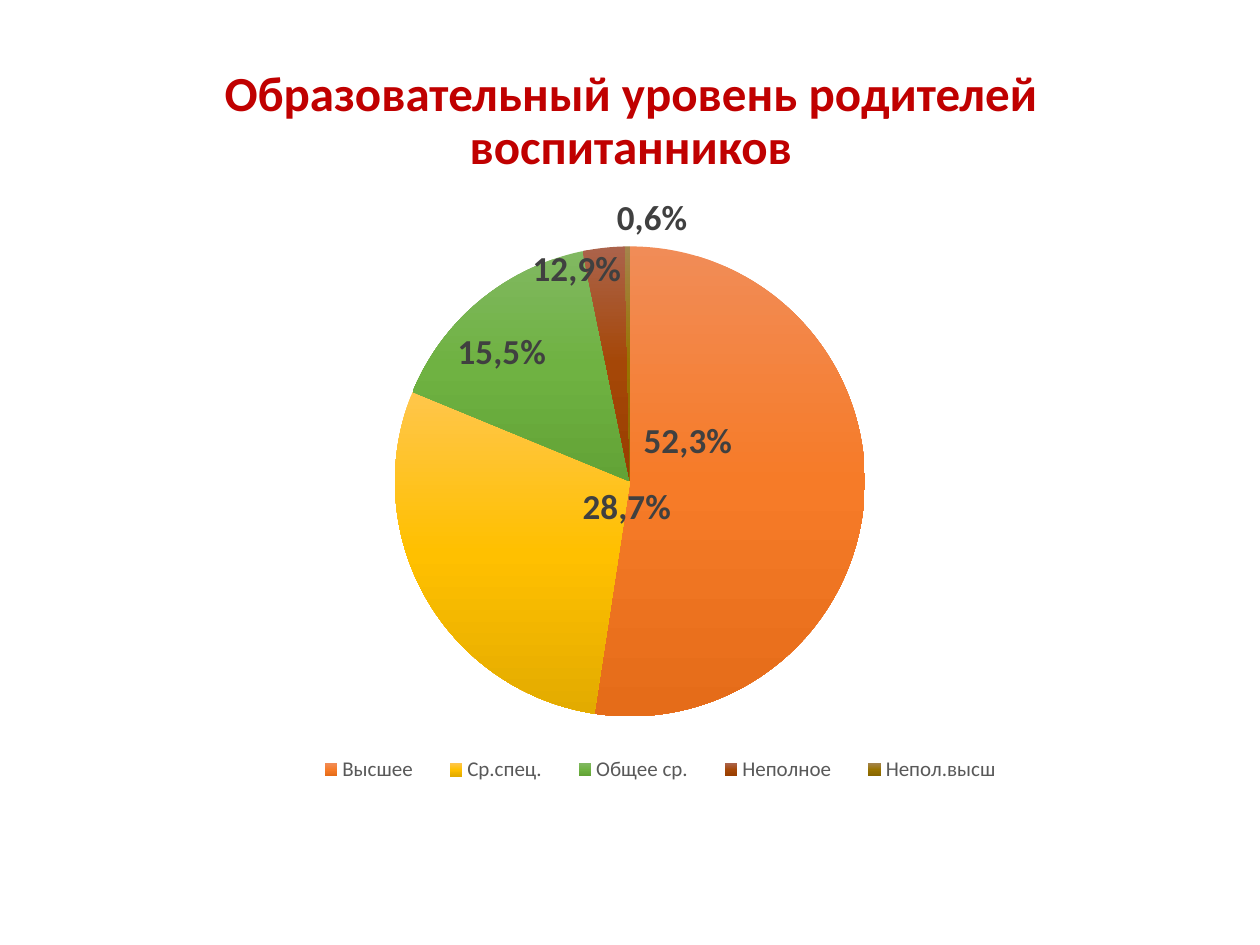
from math import cos, pi, sin

from pptx import Presentation
from pptx.chart.data import CategoryChartData
from pptx.dml.color import RGBColor
from pptx.enum.chart import XL_CHART_TYPE, XL_LABEL_POSITION, XL_LEGEND_POSITION
from pptx.enum.text import MSO_ANCHOR, PP_ALIGN
from pptx.oxml import parse_xml
from pptx.oxml.ns import nsdecls
from pptx.util import Cm, Pt

TITLE = "Образовательный уровень родителей воспитанников"
FONT = "Calibri"
COLORS = {"title": "C00000", "label": "404040", "legend": "595959"}

# category, value, label, label centre on the slide in cm, gradient from top to bottom
LEVELS = [
    ("Высшее", 91, "52,3%", (13.87, 8.89), ("F18C57", "F67B28", "E56C19")),
    ("Ср.спец.", 50, "28,7%", (12.64, 10.22), ("FFC64B", "FFC000", "E3AB00")),
    ("Общее ср.", 27, "15,5%", (10.12, 7.1), ("81B861", "6FB242", "62A336")),
    ("Неполное", 5, "12,9%", (11.63, 5.42), ("AB634B", "A54707", "983E00")),
    ("Непол.высш", 0.6, "0,6%", (13.15, 4.4), ("A4844B", "997300", "886600")),
]

CHART = (1.8, 3.88, 21.82, 12.65)  # left, top, width, height in cm
PLOT = (0.08, 0.086, 0.839, 0.749)  # the same as shares of the chart
LEGEND = (0.19, 0.885, 0.675, 0.07)


def style(font, size, color, bold=False):
    font.name, font.size, font.bold = FONT, Pt(size), bold
    font.color.rgb = RGBColor.from_string(COLORS[color])


def layout(**values):
    items = "".join(f'<c:{tag} val="{value}"/>' for tag, value in values.items())
    return parse_xml(f'<c:layout {nsdecls("c")}><c:manualLayout>{items}'
                     '</c:manualLayout></c:layout>')


def box_layout(box, **target):
    """Layout with a fixed place and size inside the chart."""
    x, y, w, h = box
    return layout(**target, xMode="edge", yMode="edge", x=x, y=y, w=w, h=h)


def gradient(colors):
    stops = "".join(f'<a:gs pos="{i * 50000}"><a:srgbClr val="{c}"/></a:gs>'
                    for i, c in enumerate(colors))
    return parse_xml(f'<a:gradFill {nsdecls("a")} rotWithShape="1"><a:gsLst>{stops}</a:gsLst>'
                     '<a:lin ang="5400000" scaled="0"/></a:gradFill>')


prs = Presentation()
prs.slide_width, prs.slide_height = Cm(25.4), Cm(19.05)
s = prs.slides.add_slide(prs.slide_layouts[6])

tf = s.shapes.add_textbox(Cm(1.83), Cm(0), Cm(21.77), Cm(4.93)).text_frame
tf.word_wrap, tf.vertical_anchor = True, MSO_ANCHOR.MIDDLE
p = tf.paragraphs[0]
p.text, p.alignment, p.line_spacing = TITLE, PP_ALIGN.CENTER, 0.9
style(p.font, 28, "title", True)

data = CategoryChartData()
data.categories = [level[0] for level in LEVELS]
data.add_series("Series 1", [level[1] for level in LEVELS])
chart = s.shapes.add_chart(XL_CHART_TYPE.PIE, *map(Cm, CHART), data).chart
chart.has_title = False
chart.font.name, chart.font.size = FONT, Pt(10)
chart.has_legend = True
legend = chart.legend
legend.position = XL_LEGEND_POSITION.BOTTOM
legend.include_in_layout = False
style(legend.font, 12, "legend")

plot = chart.plots[0]
area = plot._element.getparent()
for old in area.xpath("c:layout") + legend._element.xpath("c:layout"):
    old.getparent().remove(old)
area.insert(0, box_layout(PLOT, layoutTarget="inner"))
legend._element.xpath("c:legendPos")[0].addnext(box_layout(LEGEND))

left, top, width, height = CHART
center_x = left + width * (PLOT[0] + PLOT[2] / 2)
center_y = top + height * (PLOT[1] + PLOT[3] / 2)
radius = min(width * PLOT[2], height * PLOT[3]) / 2
total = sum(level[1] for level in LEVELS)
series = plot.series[0]
style(series.data_labels.font, 20, "label", True)
series.data_labels.show_value = True

start = 0
for i, (_, value, text, (x, y), colors) in enumerate(LEVELS):
    point = series.points[i]
    point.format.line.fill.background()
    point.format.fill.background()
    no_fill = series._element.xpath(f"c:dPt[c:idx/@val='{i}']/c:spPr/a:noFill")[0]
    no_fill.getparent().replace(no_fill, gradient(colors))

    label = point.data_label
    r = label.text_frame.paragraphs[0].add_run()
    r.text = text
    style(r.font, 20, "label", True)
    label.position = XL_LABEL_POSITION.CENTER
    # A label's layout is its shift from the middle of the slice
    angle = 2 * pi * (start + value / 2) / total
    shift_x = (x - center_x - radius / 2 * sin(angle)) / width
    shift_y = (y - center_y + radius / 2 * cos(angle)) / height
    index = series._element.xpath(f"c:dLbls/c:dLbl/c:idx[@val='{i}']")[0]
    index.addnext(layout(x=round(shift_x, 4), y=round(shift_y, 4)))
    start += value

for lines in series._element.xpath("c:dLbls/c:showLeaderLines"):
    lines.set("val", "0")

prs.save("out.pptx")
